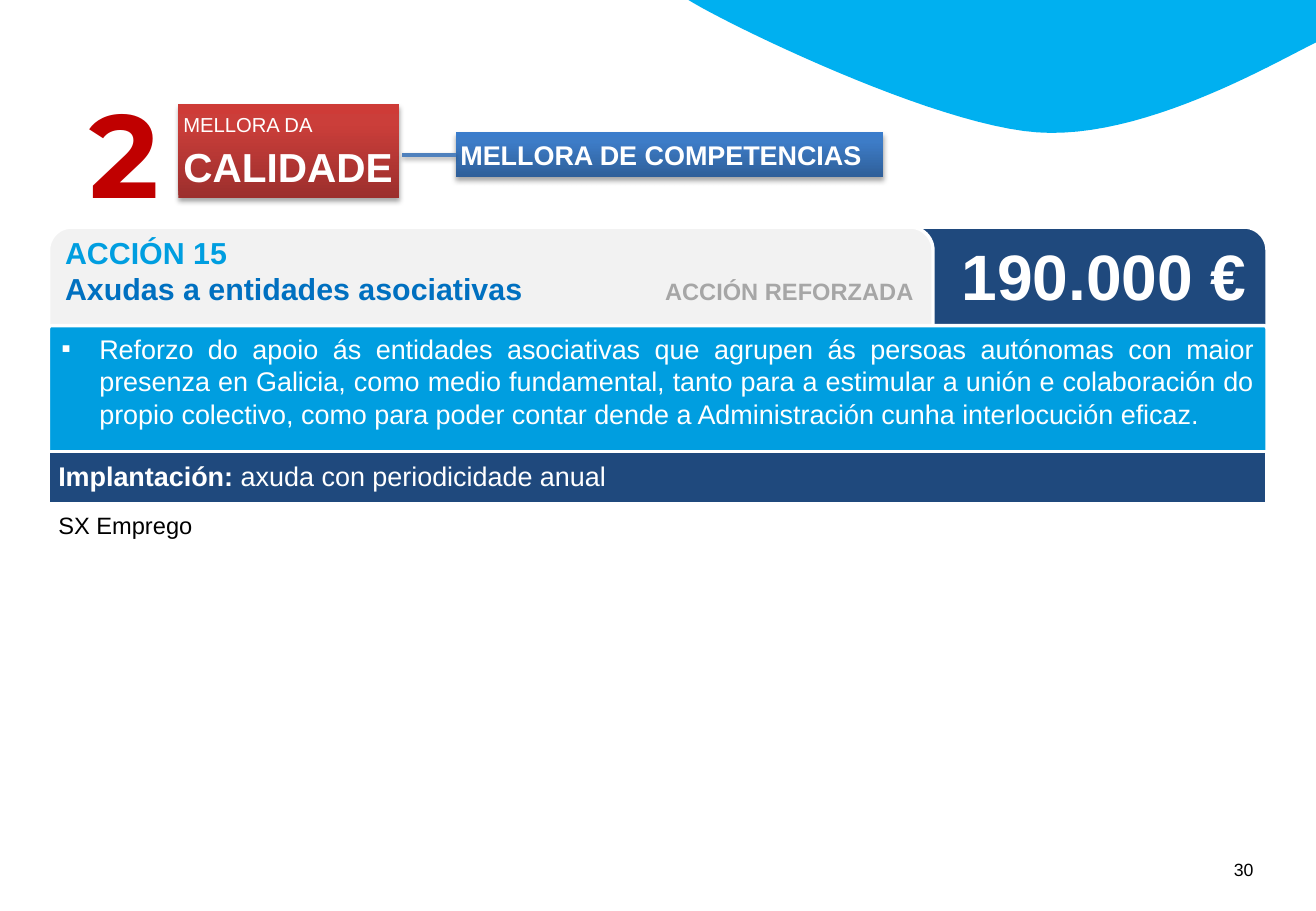
"""Build the slide for action 15, support for associations of the self-employed."""
from dataclasses import dataclass

import pptx
import pptx.dml.color
import pptx.enum.shapes
import pptx.enum.text
import pptx.oxml
import pptx.oxml.ns
import pptx.util

Pt = pptx.util.Pt
Kind = pptx.enum.shapes.MSO_SHAPE
Align = pptx.enum.text.PP_ALIGN
Anchor = pptx.enum.text.MSO_ANCHOR
SPACE = pptx.oxml.ns.nsdecls("a")


@dataclass(frozen=True)
class Theme:
    font: str = "Arial"
    digit: str = "Montserrat"
    white: str = "FFFFFF"
    black: str = "000000"
    navy: str = "1F497D"
    sky: str = "009EE0"
    wave: str = "00B0F0"
    blue: str = "0070C0"
    pale: str = "F2F2F2"
    gray: str = "A6A6A6"
    red: str = "C00000"
    link: str = "4F81BD"
    warm: tuple = ("9C2F2D", "CB3E3A", "CE3B37")
    cool: tuple = ("2F5F99", "3D7CC7", "3A7CCB")
    page: float = 10.5
    small: int = 12
    note: int = 14
    body: int = 16
    head: int = 18
    large: int = 24
    price: int = 38
    huge: int = 70


theme = Theme()
color = pptx.dml.color.RGBColor.from_string


def place(kind, area, fill=None, edge=None):
    """Add a text box, or a preset shape with a plain fill and edge."""
    area = [Pt(size) for size in area]
    if kind is None:
        return slide.shapes.add_textbox(*area)
    shape = slide.shapes.add_shape(kind, *area)
    shape.shadow.inherit = False
    if fill:
        shape.fill.solid()
        shape.fill.fore_color.rgb = color(fill)
    if edge:
        shape.line.color.rgb = color(edge)
        shape.line.width = Pt(2)
    else:
        shape.line.fill.background()
    return shape


def write(shape, lines, inset=(7.2, 3.6, 7.2, 3.6), anchor=Anchor.TOP, font=theme.font):
    """Fill a shape with lines of (text, size, color, bold) runs."""
    frame = shape.text_frame
    frame.word_wrap = True
    frame.vertical_anchor = anchor
    frame.margin_left, frame.margin_top, frame.margin_right, frame.margin_bottom = map(Pt, inset)
    frame.text = "\n".join(line[0][0] for line in lines)
    for para, line in zip(frame.paragraphs, lines):
        para.alignment = Align.LEFT
        for extra in line[1:]:
            para.add_run().text = extra[0]
        for run, (_, size, tint, bold) in zip(para.runs, line):
            run.font.name = font
            run.font.size = Pt(size)
            run.font.color.rgb = color(tint)
            run.font.bold = bold
    return frame


deck = pptx.Presentation()
deck.slide_width, deck.slide_height = Pt(780), Pt(540)
slide = deck.slides.add_slide(deck.slide_layouts[6])

curves = [
    [(408, 0), (429.8, 13.7), (553, 74.2), (614.9, 78.5)],
    [(614.9, 78.5), (676.8, 82.8), (752.4, 38.9), (780, 25.2)],
]
steps = 24
dots = []
for curve in curves:
    for step in range(1, steps + 1):
        t = step / steps
        parts = ((1 - t) ** 3, 3 * t * (1 - t) ** 2, 3 * t * t * (1 - t), t ** 3)
        dots.append([Pt(sum(w * dot[axis] for w, dot in zip(parts, curve))) for axis in (0, 1)])
pen = slide.shapes.build_freeform(Pt(408), 0)
pen.add_line_segments(dots + [(Pt(780), 0)], close=True)
wave = pen.convert_to_shape()
wave.shadow.inherit = False
wave.fill.solid()
wave.fill.fore_color.rgb = color(theme.wave)
wave.line.fill.background()

write(place(None, (724.3, 505.4, 34, 20)), [[("30", theme.page, theme.black, False)]])

tight = (5.76, 0, 5.76, 2.88)
place(Kind.ROUND_2_SAME_RECTANGLE, (276.5, 134.6, 474.5, 82), theme.navy, theme.white)
title = place(Kind.ROUND_2_SAME_RECTANGLE, (28.8, 134.6, 524.2, 82), theme.pale, theme.white)
frame = write(title, [
    [("ACCIÓN 15", theme.head, theme.sky, True)],
    [("Axudas a entidades asociativas", theme.head, theme.blue, True),
     ("\tACCIÓN REFORZADA", theme.note, theme.gray, True)],
], tight)
props = frame.paragraphs[1]._p.get_or_add_pPr()
props.append(pptx.oxml.parse_xml(
    f'<a:tabLst {SPACE}><a:tab pos="{Pt(355.6)}" algn="l"/></a:tabLst>'))

detail = place(Kind.ROUNDED_RECTANGLE, (28.8, 193, 722.2, 85.7), theme.sky, theme.white)
detail.adjustments[0] = 0.02
frame = write(detail, [[(
    "Reforzo do apoio ás entidades asociativas que agrupen ás persoas autónomas con maior "
    "presenza en Galicia, como medio fundamental, tanto para a estimular a unión e colaboración "
    "do propio colectivo, como para poder contar dende a Administración cunha interlocución eficaz.",
    theme.body, theme.white, False)]])
para = frame.paragraphs[0]
para.alignment = Align.JUSTIFY
para.space_after = Pt(6)
props = para._p.get_or_add_pPr()
props.set("marL", str(Pt(22.5)))
props.set("indent", str(-Pt(22.5)))
for mark in ('buFont {} typeface="Arial"', 'buChar {} char="▪"'):
    props.append(pptx.oxml.parse_xml(f"<a:{mark.format(SPACE)}/>"))

frame = write(place(None, (557.3, 136.8, 194.4, 53.3)),
              [[("190.000 €", theme.price, theme.white, True)]])
frame.paragraphs[0].alignment = Align.CENTER

term = place(Kind.RECTANGLE, (28.8, 267.8, 722.2, 31), theme.navy, theme.white)
unit = place(None, (28.8, 296.6, 112.3, 32.4))
for shape, runs in (
    (term, [("Implantación:", theme.body, theme.white, True),
            (" axuda con periodicidade anual", theme.body, theme.white, False)]),
    (unit, [("SX Emprego", theme.note, theme.black, False)]),
):
    frame = write(shape, [runs], tight, Anchor.MIDDLE)
    frame.paragraphs[0].space_after = Pt(6)

goal = place(Kind.RECTANGLE, (105.8, 61.9, 131, 55.4))
skill = place(Kind.RECTANGLE, (270, 78.5, 253.4, 26.6))
snug = (2.88, 3.6, 2.88, 3.6)
frame = write(goal, [[("MELLORA DA ", theme.small, theme.white, False),
                      ("CALIDADE", theme.large, theme.white, True)]], snug)
frame.paragraphs[0].line_spacing = 1.1
write(skill, [[("MELLORA DE COMPETENCIAS", theme.body, theme.white, True)]], snug)
for shape, shades in ((goal, theme.warm), (skill, theme.cool)):
    stops = "".join(f'<a:gs pos="{spot}"><a:srgbClr val="{shade}"/></a:gs>'
                    for spot, shade in zip((0, 80000, 100000), shades))
    shape._element.spPr.insert(2, pptx.oxml.parse_xml(
        f'<a:gradFill {SPACE} rotWithShape="1"><a:gsLst>{stops}</a:gsLst>'
        '<a:lin ang="16200000" scaled="0"/></a:gradFill>'))

digit = place(None, (46.1, 43.9, 61.9, 92.2))
frame = write(digit, [[("2", theme.huge, theme.red, True)]], font=theme.digit)
frame.word_wrap = False

link = slide.shapes.add_connector(
    pptx.enum.shapes.MSO_CONNECTOR.STRAIGHT, Pt(238.3), Pt(91.8), Pt(270), Pt(91.8))
link.end_connect(skill, 1)
link.line.color.rgb = color(theme.link)
link.line.width = Pt(2)
link._element.spPr.append(pptx.oxml.parse_xml(f"<a:effectLst {SPACE}/>"))

for shape, alpha, drop in ((goal, 35, 1.8), (skill, 35, 1.8), (link, 38, 1.6)):
    effects = shape._element.spPr.find(pptx.oxml.ns.qn("a:effectLst"))
    effects.append(pptx.oxml.parse_xml(
        f'<a:outerShdw {SPACE} blurRad="{Pt(3.1)}" dist="{Pt(drop)}" dir="5400000" '
        f'rotWithShape="0"><a:srgbClr val="{theme.black}"><a:alpha val="{alpha * 1000}"/>'
        '</a:srgbClr></a:outerShdw>'))

deck.save("out.pptx")
